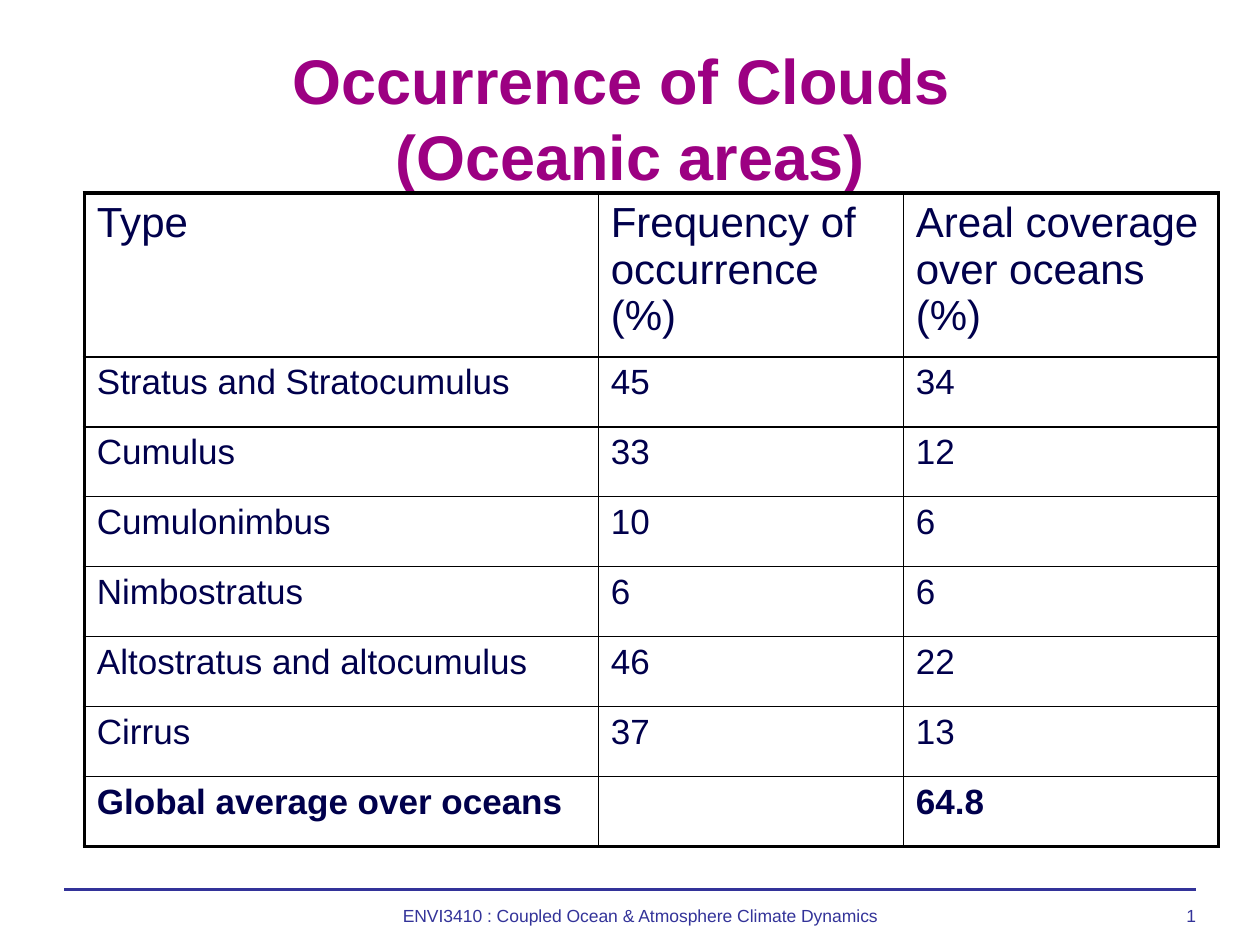
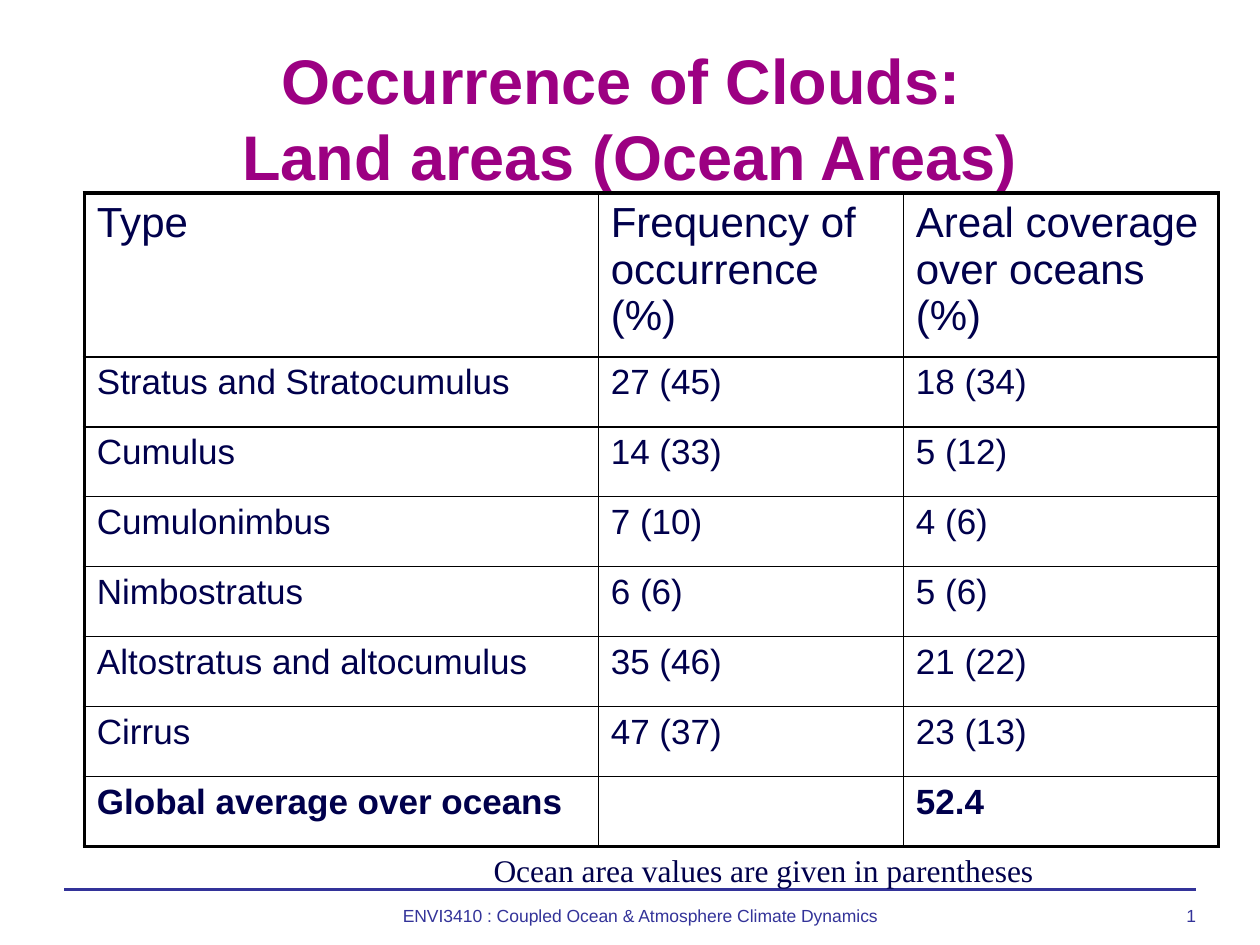
import pptx
import pptx.dml.color
import pptx.enum.shapes
import pptx.enum.text
import pptx.oxml
import pptx.oxml.ns
import pptx.util
from lxml import etree

Cm, Pt = pptx.util.Cm, pptx.util.Pt
RGB = pptx.dml.color.RGBColor
ALIGN, ANCHOR = pptx.enum.text.PP_ALIGN, pptx.enum.text.MSO_ANCHOR

PURPLE = RGB(0x9C, 0x00, 0x82)
NAVY = RGB(0x00, 0x00, 0x4C)
BLUE = RGB(0x33, 0x33, 0x99)
BLACK = RGB(0x00, 0x00, 0x00)

TITLE_BOX = (1.27, 0.43, 22.86, 3.86)
TABLE_BOX = (1.7, 3.89, 22.86, 12.94)
FOOTER_BOX = (1.3, 17.93, 22.81, 0.74)
NOTE_BOX = (9.7, 17.04, 11.4, 1.02)
COL_WIDTHS = (10.36, 6.15, 6.35)
ROW_HEIGHT = 1.41
OUTER, INNER = 2.25, 1

HEADINGS = ("Type", "Frequency of occurrence (%)", "Areal coverage over oceans (%)")
CLOUDS = ("Stratus and Stratocumulus", "Cumulus", "Cumulonimbus", "Nimbostratus",
          "Altostratus and altocumulus", "Cirrus")
OCEAN = (("45", "34"), ("33", "12"), ("10", "6"), ("6", "6"), ("46", "22"), ("37", "13"))
LAND = (("27", "18"), ("14", "5"), ("7", "4"), ("6", "5"), ("35", "21"), ("47", "23"))
LAND_AND_OCEAN = [[f"{a} ({b})" for a, b in zip(land, ocean)]
                  for land, ocean in zip(LAND, OCEAN)]


def write(tf, text, size=20, color=NAVY, font="Arial", bold=False, align=ALIGN.LEFT,
          spacing=None):
    """Fill a text frame with one formatted paragraph."""
    p = tf.paragraphs[0]
    p.text = text
    p.alignment = align
    p.line_spacing = spacing
    for r in p.runs:
        r.font.name, r.font.size, r.font.bold = font, Pt(size), bold
        r.font.color.rgb = color


def add_text(s, box, text, anchor=ANCHOR.TOP, wrap=True, margin=None, **fmt):
    """Place a text box on the slide."""
    tf = s.shapes.add_textbox(*map(Cm, box)).text_frame
    tf.word_wrap = wrap
    tf.vertical_anchor = anchor
    if margin is not None:
        tf.margin_left = tf.margin_top = tf.margin_right = tf.margin_bottom = Cm(margin)
    write(tf, text, **fmt)


def set_borders(cell, **widths):
    """Draw the cell edges L, R, T and B at the given point widths."""
    tc_pr = cell._tc.get_or_add_tcPr()
    for side, width in widths.items():
        ln = etree.SubElement(tc_pr, pptx.oxml.ns.qn(f"a:ln{side}"), w=str(Pt(width)))
        fill = etree.SubElement(ln, pptx.oxml.ns.qn("a:solidFill"))
        etree.SubElement(fill, pptx.oxml.ns.qn("a:srgbClr"), val=str(BLACK))


def add_cloud_table(s, box, values, average):
    """Place the table of cloud types, with its header and average rows."""
    rows = [HEADINGS, *((cloud, *pair) for cloud, pair in zip(CLOUDS, values)),
            ("Global average over oceans", "", average)]
    last_row, last_col = len(rows) - 1, len(HEADINGS) - 1
    table = s.shapes.add_table(len(rows), len(HEADINGS), *map(Cm, box)).table
    table.first_row = table.horz_banding = False
    for col, width in zip(table.columns, COL_WIDTHS):
        col.width = Cm(width)
    for row in table.rows:
        row.height = Cm(ROW_HEIGHT)
    table.rows[0].height = Cm(box[3] - last_row * ROW_HEIGHT)
    for i, row in enumerate(rows):
        for j, text in enumerate(row):
            cell = table.cell(i, j)
            set_borders(cell, L=INNER if j else OUTER,
                        R=OUTER if j == last_col else INNER,
                        T=INNER if i else OUTER,
                        B=OUTER if i == last_row else INNER)
            cell.fill.background()
            write(cell.text_frame, text, size=20 if i else 24, bold=i == last_row)


def add_footer(s, box):
    """Place the rule, course name and slide number."""
    left, top, width, height = box
    right = left + width
    rule = s.shapes.add_connector(pptx.enum.shapes.MSO_CONNECTOR.STRAIGHT,
                                  Cm(left), Cm(top), Cm(right), Cm(top))
    rule.line.color.rgb = BLUE
    rule.line.width = Pt(1.5)
    etree.SubElement(rule._element.spPr, pptx.oxml.ns.qn("a:effectLst"))
    fmt = dict(anchor=ANCHOR.BOTTOM, margin=0, size=10, color=BLUE, spacing=0.93)
    add_text(s, (left + 5.61, top, 11.99, height),
             "ENVI3410 : Coupled Ocean & Atmosphere Climate Dynamics",
             align=ALIGN.CENTER, **fmt)
    add_text(s, (right - 4.42, top, 4.42, height), "1", align=ALIGN.RIGHT, **fmt)


def add_cloud_slide(prs, title, values, average, note=None):
    """Add a slide with a title, a cloud table, a footer and an optional note."""
    s = prs.slides.add_slide(prs.slide_layouts[6])
    add_footer(s, FOOTER_BOX)
    add_text(s, TITLE_BOX, title, anchor=ANCHOR.MIDDLE, size=36, color=PURPLE,
             bold=True, align=ALIGN.CENTER)
    add_cloud_table(s, TABLE_BOX, values, average)
    if note:
        add_text(s, NOTE_BOX, note, wrap=False, size=18, font="Times New Roman")


def main():
    """Build the presentation."""
    prs = pptx.Presentation()
    prs.slide_width, prs.slide_height = Cm(25.4), Cm(19.05)
    add_cloud_slide(prs, "Occurrence of Clouds \v(Oceanic areas)", OCEAN, "64.8")
    add_cloud_slide(prs, "Occurrence of Clouds: \vLand areas (Ocean Areas)",
                    LAND_AND_OCEAN, "52.4", "Ocean area values are given in parentheses")
    prs.save("out.pptx")


if __name__ == "__main__":
    main()
